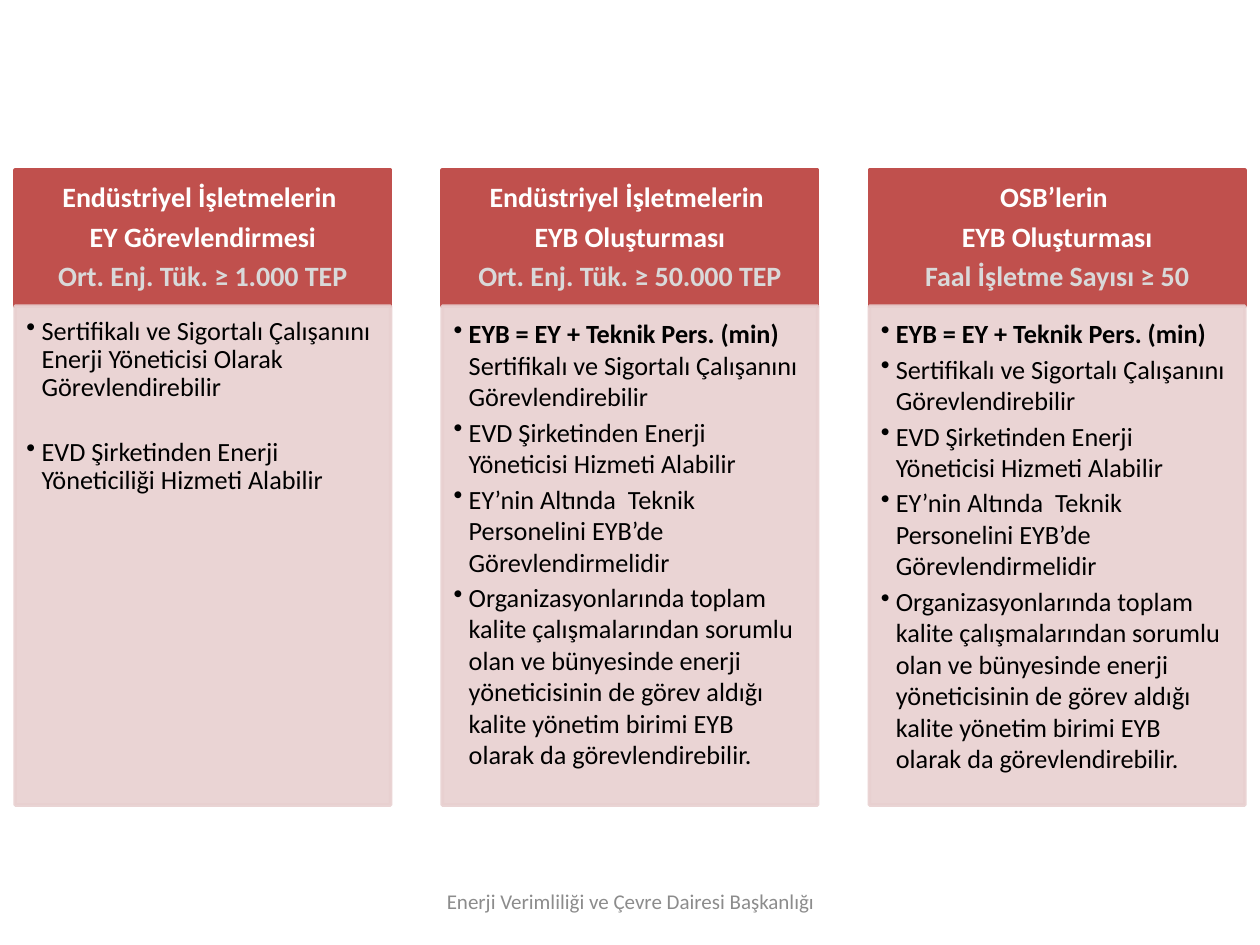
"""Build a slide with three columns on energy manager and energy unit duties."""
from pptx import Presentation, util as u
from pptx.dml import color
from pptx.enum import shapes, text
from pptx.oxml import ns, xmlchemy

COLORS = {"header": "C0504D", "body": "E8D0D0", "white": "FFFFFF",
          "threshold": "D9D9D9", "ink": "000000", "footer": "8C8C8C"}
LEFT, PITCH, WIDTH = 0.12, 3.39, 2.98
HEADER_TOP, HEADER_HEIGHT, BODY_HEIGHT = 1.35, 1.08, 3.96

UNIT = "EYB = EY + Teknik Pers. (min)"
CERTIFIED = "Sertifikalı ve Sigortalı Çalışanını "
ASSIGN = CERTIFIED + "Görevlendirebilir"
SHARED = [
    [("EVD Şirketinden Enerji Yöneticisi Hizmeti Alabilir", False)],
    [("EY’nin Altında  Teknik Personelini EYB’de Görevlendirmelidir", False)],
    [("Organizasyonlarında toplam kalite çalışmalarından sorumlu olan ve "
      "bünyesinde enerji yöneticisinin de görev aldığı kalite yönetim birimi "
      "EYB olarak da görevlendirebilir.", False)],
]
COLUMNS = [
    {"heading": ["Endüstriyel İşletmelerin ", "EY Görevlendirmesi"],
     "threshold": "Ort. Enj. Tük. ≥ 1.000 TEP",
     "bullets": [
         [(CERTIFIED + "Enerji Yöneticisi Olarak Görevlendirebilir", False)],
         [("EVD Şirketinden Enerji Yöneticiliği Hizmeti Alabilir", False)]],
     "line_spacing": 0.9, "space_after": 20.7},
    {"heading": ["Endüstriyel İşletmelerin ", "EYB Oluşturması"],
     "threshold": "Ort. Enj. Tük. ≥ 50.000 TEP",
     "bullets": [[(UNIT + " ", True), (ASSIGN, False)], *SHARED],
     "line_spacing": 1.0, "space_after": 2.25},
    {"heading": ["OSB’lerin ", "EYB Oluşturması"],
     "threshold": "Faal İşletme Sayısı ≥ 50",
     "bullets": [[(UNIT, True)], [(ASSIGN, False)], *SHARED],
     "line_spacing": 1.0, "space_after": 2.25},
]


class SlideBuilder:
    """Hold the font and the current slide, and draw its elements."""

    def __init__(self, slide, font="Calibri"):
        """Keep the slide and the font name."""
        self.slide = slide
        self.font = font

    def add_run(self, paragraph, content, size, color_name, bold=False):
        """Append one styled run to a paragraph."""
        run = paragraph.add_run()
        run.text = content
        run.font.name = self.font
        run.font.size = u.Pt(size)
        run.font.bold = bold
        run.font.color.rgb = color.RGBColor.from_string(COLORS[color_name])

    def next_paragraph(self, frame, index, alignment, line_spacing, space_after):
        """Return the paragraph at an index, adding it when it is not the first."""
        paragraph = frame.add_paragraph() if index else frame.paragraphs[0]
        paragraph.alignment = alignment
        paragraph.line_spacing = line_spacing
        paragraph.space_after = u.Pt(space_after)
        return paragraph

    def set_frame(self, frame, margins, anchor):
        """Set wrapping, margins and anchor of a text frame."""
        frame.word_wrap = True
        frame.vertical_anchor = anchor
        (frame.margin_left, frame.margin_top,
         frame.margin_right, frame.margin_bottom) = map(u.Inches, margins)

    def add_panel(self, left, top, height, color_name, opacity=100):
        """Draw one rectangle with matching fill and line."""
        shape = self.slide.shapes.add_shape(
            shapes.MSO_SHAPE.RECTANGLE, u.Inches(left), u.Inches(top),
            u.Inches(WIDTH), u.Inches(height))
        shape.shadow.inherit = False
        rgb = color.RGBColor.from_string(COLORS[color_name])
        shape.fill.solid()
        shape.fill.fore_color.rgb = rgb
        shape.line.color.rgb = rgb
        shape.line.width = u.Pt(2)
        if opacity < 100:
            for element in shape._element.spPr.iter(ns.qn("a:srgbClr")):
                alpha = xmlchemy.OxmlElement("a:alpha")
                alpha.set("val", str(opacity * 1000))
                element.append(alpha)
        return shape

    def add_header(self, left, heading, threshold):
        """Draw the header panel of a column."""
        frame = self.add_panel(left, HEADER_TOP, HEADER_HEIGHT, "header").text_frame
        self.set_frame(frame, (0.12, 0.07, 0.12, 0.07), text.MSO_ANCHOR.MIDDLE)
        lines = [(line, "white") for line in heading] + [(threshold, "threshold")]
        for index, (line, color_name) in enumerate(lines):
            paragraph = self.next_paragraph(
                frame, index, text.PP_ALIGN.CENTER, 0.9, 5.4)
            self.add_run(paragraph, line, 16, color_name, True)

    def add_body(self, left, bullets, line_spacing, space_after):
        """Draw the bulleted panel of a column."""
        frame = self.add_panel(
            left, HEADER_TOP + HEADER_HEIGHT, BODY_HEIGHT, "body", 90).text_frame
        self.set_frame(frame, (0.09, 0.09, 0.12, 0.13), text.MSO_ANCHOR.TOP)
        for index, runs in enumerate(bullets):
            paragraph = self.next_paragraph(
                frame, index, text.PP_ALIGN.LEFT, line_spacing, space_after)
            properties = paragraph._p.get_or_add_pPr()
            properties.set("marL", str(u.Inches(0.12)))
            properties.set("indent", str(u.Inches(-0.12)))
            bullet = xmlchemy.OxmlElement("a:buChar")
            bullet.set("char", "•")
            properties.append(bullet)
            for content, bold in runs:
                self.add_run(paragraph, content, 15, "ink", bold)

    def add_footer(self, content):
        """Write the centred footer line."""
        box = self.slide.shapes.add_textbox(
            u.Inches(3.42), u.Inches(6.95), u.Inches(3.17), u.Inches(0.4))
        self.set_frame(box.text_frame, (0.1, 0.05, 0.1, 0.05), text.MSO_ANCHOR.MIDDLE)
        paragraph = self.next_paragraph(
            box.text_frame, 0, text.PP_ALIGN.CENTER, 1.0, 0)
        self.add_run(paragraph, content, 12, "footer")


def main():
    """Create and save the presentation."""
    presentation = Presentation()
    presentation.slide_width = u.Inches(10)
    presentation.slide_height = u.Inches(7.5)
    builder = SlideBuilder(
        presentation.slides.add_slide(presentation.slide_layouts[6]))
    builder.add_footer("Enerji Verimliliği ve Çevre Dairesi Başkanlığı")
    for index, column in enumerate(COLUMNS):
        left = LEFT + index * PITCH
        builder.add_header(left, column["heading"], column["threshold"])
        builder.add_body(left, column["bullets"],
                         column["line_spacing"], column["space_after"])
    presentation.save("out.pptx")


if __name__ == "__main__":
    main()
